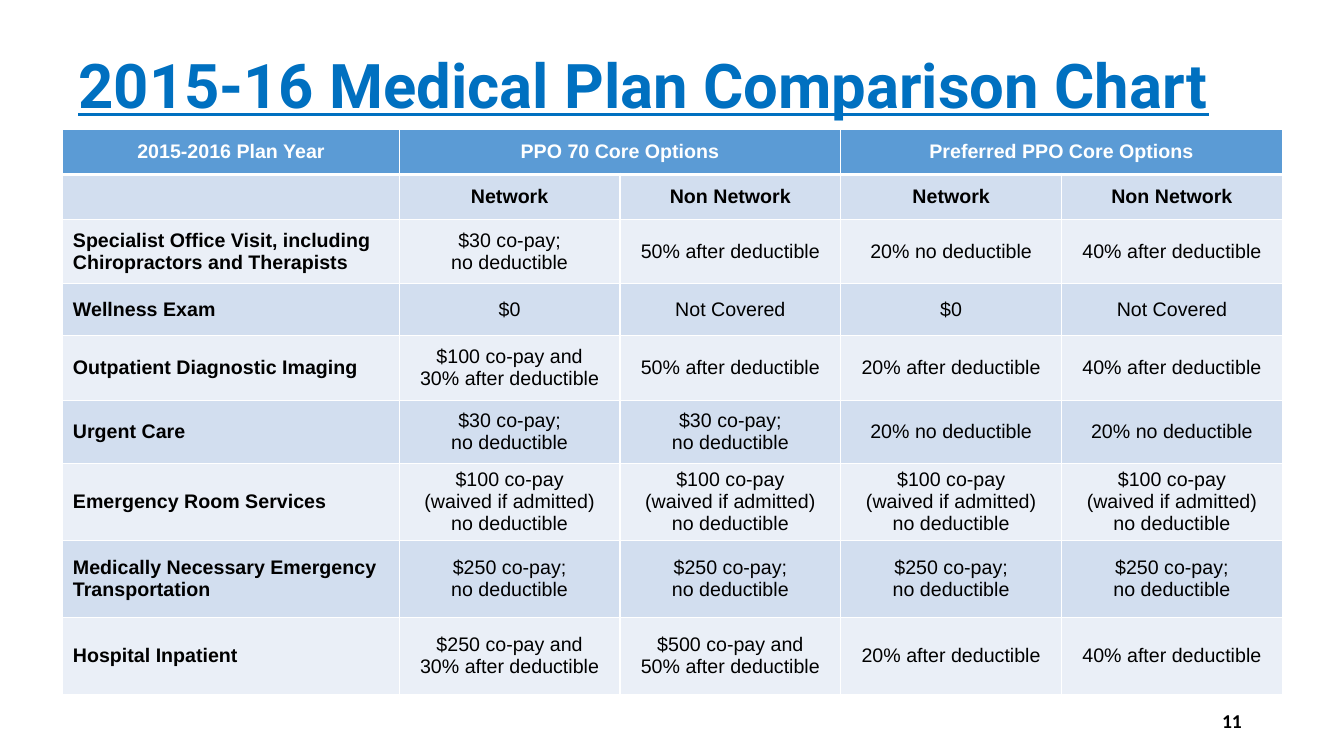
"""Build the medical plan comparison slide."""
from dataclasses import dataclass

from lxml.etree import SubElement
from pptx import Presentation
from pptx.dml.color import RGBColor
from pptx.enum.text import MSO_ANCHOR, PP_ALIGN
from pptx.oxml.ns import qn
from pptx.slide import Slide
from pptx.table import _Cell
from pptx.text.text import TextFrame
from pptx.util import Pt

WHITE, BLACK, TITLE_BLUE = "FFFFFF", "000000", "0070C0"
HEADER_BLUE, BAND_DARK, BAND_LIGHT = "5B9BD5", "D2DEEF", "EAEFF7"

TABLE_LEFT, TABLE_TOP = 44.9, 92.2
COLUMN_WIDTHS = [240.3] + [157.7] * 4
ROW_HEIGHTS = [32.4, 32.4, 45.4, 37.5, 46.1, 45.1, 55.1, 54.9, 54.9]

OFFICE_COPAY = "$30 co-pay;\nno deductible"
EMERGENCY_COPAY = "$100 co-pay\n(waived if admitted)\nno deductible"
TRANSPORT_COPAY = "$250 co-pay;\nno deductible"


@dataclass(frozen=True)
class TextStyle:
    font: str
    size: float
    color: str
    bold: bool = True
    underline: bool = False
    align: PP_ALIGN = PP_ALIGN.LEFT
    line_spacing: float = 1.0


@dataclass(frozen=True)
class Label:
    text: str
    left: float
    top: float
    width: float
    height: float
    style: TextStyle


@dataclass(frozen=True)
class PlanRow:
    service: str
    benefits: tuple[str, str, str, str]


HEADER_STYLE = TextStyle("Arial", 14, WHITE, align=PP_ALIGN.CENTER)
NETWORK_STYLE = TextStyle("Arial", 14, BLACK, align=PP_ALIGN.CENTER)
SERVICE_STYLE = TextStyle("Arial", 14, BLACK)
BENEFIT_STYLE = TextStyle("Arial", 14, BLACK, bold=False, align=PP_ALIGN.CENTER)

LABELS = [
    Label("2015-16 Medical Plan Comparison Chart", 49, 10.8, 861.8, 104.4,
          TextStyle("Roboto", 44, TITLE_BLUE, underline=True, line_spacing=0.9)),
    Label("11", 678.2, 500.4, 216, 28.8,
          TextStyle("Calibri", 14, BLACK, align=PP_ALIGN.RIGHT)),
]

PLAN_ROWS = [
    PlanRow("2015-2016 Plan Year",
            ("PPO 70 Core Options", "", "Preferred PPO Core Options", "")),
    PlanRow("", ("Network", "Non Network") * 2),
    PlanRow("Specialist Office Visit, including Chiropractors and Therapists",
            (OFFICE_COPAY, "50% after deductible", "20% no deductible", "40% after deductible")),
    PlanRow("Wellness Exam", ("$0", "Not Covered") * 2),
    PlanRow("Outpatient Diagnostic Imaging",
            ("$100 co-pay and\n30% after deductible", "50% after deductible",
             "20% after deductible", "40% after deductible")),
    PlanRow("Urgent Care", (OFFICE_COPAY,) * 2 + ("20% no deductible",) * 2),
    PlanRow("Emergency Room Services", (EMERGENCY_COPAY,) * 4),
    PlanRow("Medically Necessary Emergency Transportation", (TRANSPORT_COPAY,) * 4),
    PlanRow("Hospital Inpatient",
            ("$250 co-pay and\n30% after deductible", "$500 co-pay and\n50% after deductible",
             "20% after deductible", "40% after deductible")),
]


def rgb(color: str) -> RGBColor:
    return RGBColor.from_string(color)


def write_text(frame: TextFrame, text: str, style: TextStyle) -> None:
    frame.text = text
    for para in frame.paragraphs:
        para.alignment = style.align
        para.line_spacing = style.line_spacing
        for span in para.runs:
            span.font.name = style.font
            span.font.size = Pt(style.size)
            span.font.bold = style.bold
            span.font.underline = style.underline
            span.font.color.rgb = rgb(style.color)


def add_label(page: Slide, label: Label) -> None:
    box = page.shapes.add_textbox(
        Pt(label.left), Pt(label.top), Pt(label.width), Pt(label.height))
    box.text_frame.word_wrap = True
    box.text_frame.vertical_anchor = MSO_ANCHOR.MIDDLE
    write_text(box.text_frame, label.text, label.style)


def add_borders(cell: _Cell, top: float, bottom: float) -> None:
    properties = cell._tc.get_or_add_tcPr()
    sides = {"lnL": 1, "lnR": 1, "lnT": top, "lnB": bottom}
    for position, (side, width) in enumerate(sides.items()):
        line = SubElement(properties, qn(f"a:{side}"), w=str(Pt(width)))
        fill = SubElement(line, qn("a:solidFill"))
        SubElement(fill, qn("a:srgbClr"), val=WHITE)
        properties.insert(position, line)


def cell_style(row: int, column: int) -> TextStyle:
    if row == 0:
        return HEADER_STYLE
    if row == 1:
        return NETWORK_STYLE
    return SERVICE_STYLE if column == 0 else BENEFIT_STYLE


def row_fill(row: int) -> str:
    if row == 0:
        return HEADER_BLUE
    return BAND_DARK if row % 2 else BAND_LIGHT


def add_plan_table(page: Slide) -> None:
    table = page.shapes.add_table(
        len(ROW_HEIGHTS), len(COLUMN_WIDTHS), Pt(TABLE_LEFT), Pt(TABLE_TOP),
        Pt(sum(COLUMN_WIDTHS)), Pt(sum(ROW_HEIGHTS))).table
    table.first_row = False
    table.horz_banding = False
    for column, width in zip(table.columns, COLUMN_WIDTHS):
        column.width = Pt(width)
    for row, height in zip(table.rows, ROW_HEIGHTS):
        row.height = Pt(height)
    for first in (1, 3):
        table.cell(0, first).merge(table.cell(0, first + 1))
    for row, plan_row in enumerate(PLAN_ROWS):
        for column, text in enumerate((plan_row.service, *plan_row.benefits)):
            cell = table.cell(row, column)
            cell.vertical_anchor = MSO_ANCHOR.MIDDLE
            cell.fill.solid()
            cell.fill.fore_color.rgb = rgb(row_fill(row))
            add_borders(cell, top=3 if row == 1 else 1, bottom=3 if row == 0 else 1)
            if text:
                write_text(cell.text_frame, text, cell_style(row, column))


def main() -> None:
    deck = Presentation()
    deck.slide_width, deck.slide_height = Pt(960), Pt(540)
    page = deck.slides.add_slide(deck.slide_layouts[6])
    add_plan_table(page)
    for label in LABELS:
        add_label(page, label)
    deck.save("out.pptx")


if __name__ == "__main__":
    main()
